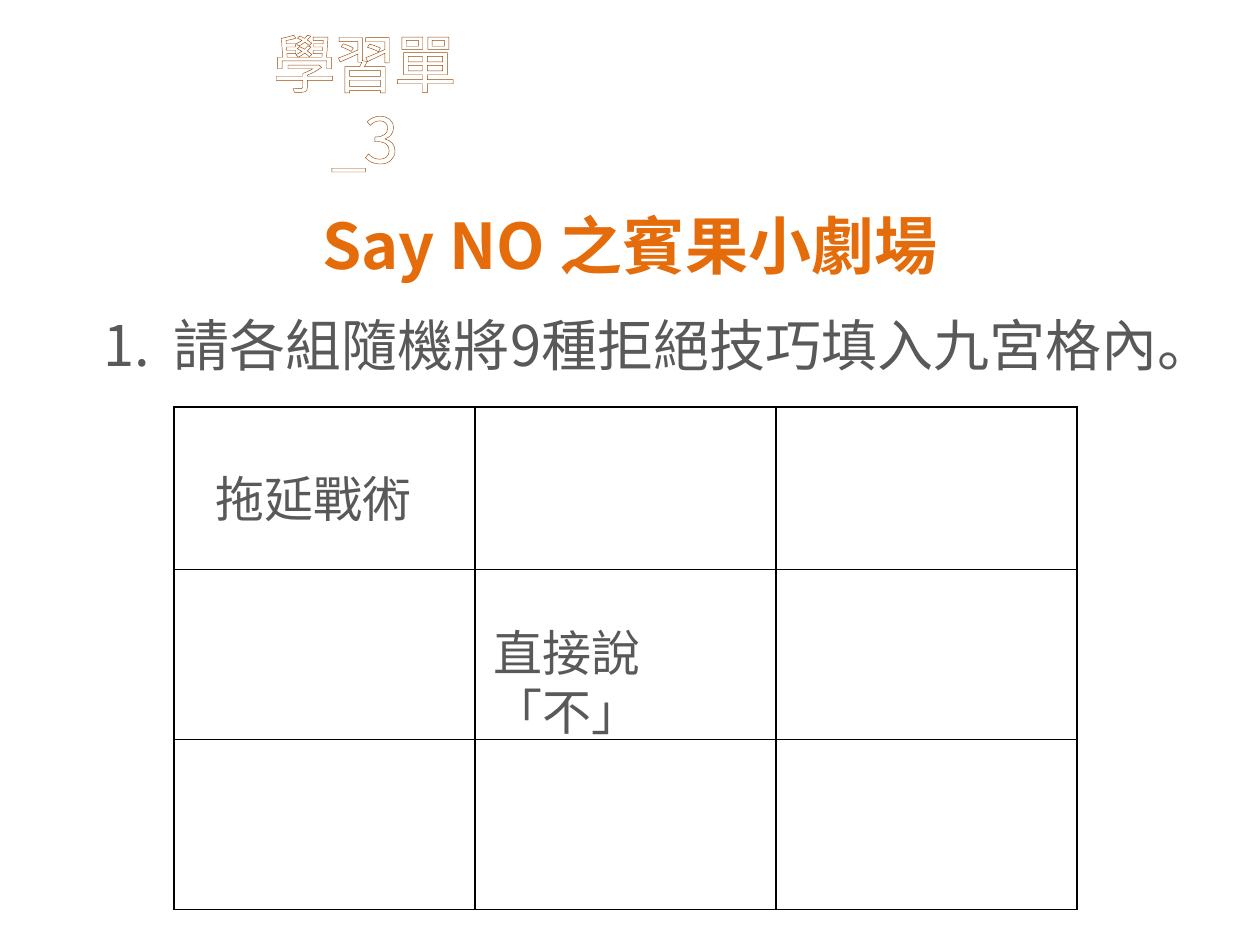
from pptx import Presentation
from pptx.dml.color import RGBColor
from pptx.enum import text
from pptx.oxml import parse_xml
from pptx.oxml.ns import nsdecls
from pptx.util import Inches, Pt

SANS = "Noto Sans CJK SC"
GREY = "595959"


def node(tag, attrs="", inner=""):
    """Build one DrawingML element."""
    return parse_xml(f'<a:{tag} {nsdecls("a")} {attrs}>{inner}</a:{tag}>')


def style(font, size, color, name=SANS, bold=False):
    font.size, font.bold, font.name = Pt(size), bold, name
    font.color.rgb = RGBColor.from_string(color)
    font._element.append(node("ea", f'typeface="{name}"'))


prs = Presentation()
prs.slide_width, prs.slide_height = Inches(10), Inches(7.5)
slide = prs.slides.add_slide(prs.slide_layouts[5])

# Numbered instruction
title = slide.shapes.title
title.left, title.top = Inches(0.72), Inches(2.11)
title.width, title.height = Inches(9), Inches(1.25)
frame = title.text_frame
frame.text = "請各組隨機將9種拒絕技巧填入九宮格內。"
frame.vertical_anchor = text.MSO_ANCHOR.MIDDLE
frame.auto_size = text.MSO_AUTO_SIZE.NONE
para = frame.paragraphs[0]
para.alignment = text.PP_ALIGN.LEFT
props = para._p.get_or_add_pPr()
props.set("marL", str(Inches(0.56)))
props.set("indent", str(-Inches(0.56)))
props.append(node("buFont", 'typeface="+mj-lt"'))
props.append(node("buAutoNum", 'type="arabicPeriod"'))
style(para.font, 32, GREY)

# Bingo grid
grid = slide.shapes.add_table(3, 3, Inches(1.38), Inches(3.23),
                              Inches(7.17), Inches(3.99)).table
grid.first_row = grid.horz_banding = False
for row, high in zip(grid.rows, (1.29, 1.35, 1.35)):
    row.height = Inches(high)
    for cell in row.cells:
        for side in ("lnL", "lnR", "lnT", "lnB"):
            cell._tc.get_or_add_tcPr().append(node(
                side, f'w="{Pt(1)}"',
                '<a:solidFill><a:srgbClr val="000000"/></a:solidFill>'))
        cell.fill.background()

# Grid entries, heading and sheet label
labels = (
    ("直接說「不」", 3.82, 4.89, 2.2, 0.57, 28, GREY),
    ("拖延戰術", 1.61, 3.67, 1.81, 0.57, 28, GREY),
    ("Say NO 之賓果小劇場", 0.5, 1.31, 9, 1.25, 36, "E46C0A"),
    ("學習單_3", 1.77, 0.44, 2.25, 0.71, 36, "FFFFFF"),
)
for words, left, top, wide, high, size, color in labels:
    box = slide.shapes.add_textbox(Inches(left), Inches(top),
                                   Inches(wide), Inches(high))
    frame = box.text_frame
    frame.word_wrap = True
    para = frame.paragraphs[0]
    run = para.add_run()
    run.text = words
    if size == 36:
        frame.vertical_anchor = text.MSO_ANCHOR.MIDDLE
        para.alignment = text.PP_ALIGN.CENTER
    if color == "FFFFFF":
        frame.margin_left = frame.margin_right = Inches(0.3)
        style(run.font, size, color, "Noto Sans CJK JP")
        props = run.font._element
        props.set("spc", "-150")
        props.insert(0, node(
            "ln", f'w="{Pt(0.8)}"',
            '<a:solidFill><a:srgbClr val="984807"/></a:solidFill>'))
    else:
        style(para.font, size, color, bold=size == 36)

prs.save("out.pptx")
